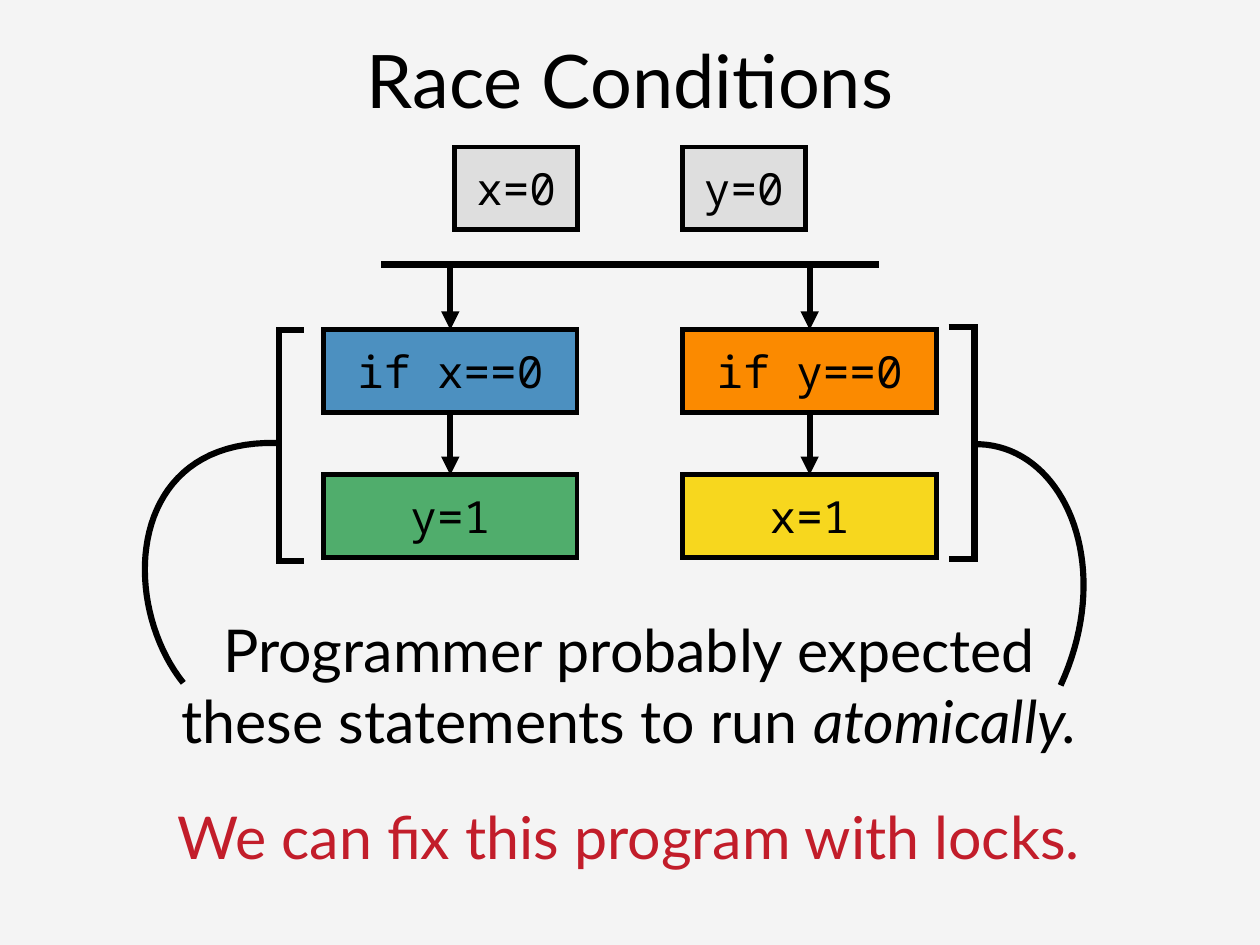
from dataclasses import dataclass
from typing import Any, Optional

from lxml.etree import SubElement
from pptx import Presentation
from pptx.dml.color import RGBColor
from pptx.enum.shapes import MSO_CONNECTOR, MSO_SHAPE
from pptx.enum.text import MSO_ANCHOR, PP_ALIGN
from pptx.oxml.ns import qn
from pptx.util import Inches, Pt

BLACK = RGBColor(0x00, 0x00, 0x00)
PAPER = RGBColor(0xF4, 0xF4, 0xF4)
GREY = RGBColor(0xDE, 0xDE, 0xDE)
BLUE = RGBColor(0x4C, 0x90, 0xC0)
ORANGE = RGBColor(0xFB, 0x8A, 0x00)
GREEN = RGBColor(0x50, 0xAD, 0x6C)
YELLOW = RGBColor(0xF7, 0xD7, 0x1E)
RED = RGBColor(0xC2, 0x1D, 0x2A)

WIDTH, HEIGHT = Inches(14.22), Inches(10.67)
COLUMNS, ROWS = 1024, 768
BOX_HEIGHT = 67
INITIAL_WIDTH, STATEMENT_WIDTH = 100, 206
INITIAL_ROW, RAIL_ROW, TEST_ROW, ASSIGN_ROW = 119.5, 215, 268, 386
THREAD_COLUMNS = (263, 555)
CURVE_STEPS = 40
TOP, BOTTOM = 0, 2

FRAME_FORMAT = {
    "vertical_anchor": MSO_ANCHOR.MIDDLE,
    "margin_left": Pt(4.5),
    "margin_right": Pt(4.5),
    "margin_top": Pt(4.5),
    "margin_bottom": Pt(4.5),
}

Point = tuple[float, float]


@dataclass(frozen=True)
class Statement:
    text: str
    column: float
    row: float
    width: float
    fill: RGBColor


@dataclass(frozen=True)
class Span:
    text: str
    italic: bool = False


@dataclass(frozen=True)
class Caption:
    lines: list[list[Span]]
    area: tuple[float, float, float, float]
    color: RGBColor


INITIAL_VALUES = [
    Statement("x=0", 369.5, INITIAL_ROW, INITIAL_WIDTH, GREY),
    Statement("y=0", 554.5, INITIAL_ROW, INITIAL_WIDTH, GREY),
]
THREADS = [
    [
        Statement(test, column, TEST_ROW, STATEMENT_WIDTH, test_fill),
        Statement(assign, column, ASSIGN_ROW, STATEMENT_WIDTH, assign_fill),
    ]
    for column, test, test_fill, assign, assign_fill in (
        (THREAD_COLUMNS[0], "if x==0", BLUE, "y=1", GREEN),
        (THREAD_COLUMNS[1], "if y==0", ORANGE, "x=1", YELLOW),
    )
]
BRACKETS = [
    [(247, 268), (227, 268), (227, 456), (247, 456)],
    [(771, 266), (792, 266), (792, 454), (771, 454)],
]
CURVES = [
    [(149, 555), (97, 490), (102, 357), (225, 360)],
    [(791, 361), (863, 359), (908, 457), (862, 557)],
]
CAPTIONS = [
    Caption(
        [
            [Span("Programmer probably expected")],
            [Span("these statements to run "), Span("atomically.", italic=True)],
        ],
        (143, 495, 737, 122),
        BLACK,
    ),
    Caption([[Span("We can fix this program with locks.")]], (132, 647, 758, 65), RED),
]


def across(columns: float) -> int:
    return round(WIDTH * columns / COLUMNS)


def down(rows: float) -> int:
    return round(HEIGHT * rows / ROWS)


def place(left: float, top: float, width: float, height: float) -> tuple[int, int, int, int]:
    return across(left), down(top), across(width), down(height)


def apply_format(target: Any, values: dict[str, Any]) -> None:
    for name, value in values.items():
        setattr(target, name, value)


def style_line(shape: Any, width: float, arrow: bool = False) -> None:
    shape.line.width = Pt(width)
    shape.line.color.rgb = BLACK
    line = shape.line._get_or_add_ln()
    SubElement(line, qn("a:miter"), lim="800000")
    if arrow:
        SubElement(line, qn("a:tailEnd"), type="triangle")


def write(frame: Any, lines: list[list[Span]], font: str, size: float, color: RGBColor) -> None:
    apply_format(frame, FRAME_FORMAT)
    para = frame.paragraphs[0]
    para.alignment = PP_ALIGN.CENTER
    for index, line in enumerate(lines):
        if index:
            para.add_line_break()
        for span in line:
            run = para.add_run()
            run.text = span.text
            apply_format(run.font, {"name": font, "size": Pt(size), "italic": span.italic})
            run.font.color.rgb = color


def draw_statement(page: Any, statement: Statement) -> Any:
    area = place(statement.column, statement.row, statement.width, BOX_HEIGHT)
    box = page.shapes.add_shape(MSO_SHAPE.RECTANGLE, *area)
    box.shadow.inherit = False
    box.fill.solid()
    box.fill.fore_color.rgb = statement.fill
    style_line(box, 4)
    write(box.text_frame, [[Span(statement.text)]], "Noto Sans Mono", 36, BLACK)
    return box


def draw_connector(page: Any, start: Point, end: Point, source: Optional[Any] = None,
                   target: Optional[Any] = None) -> None:
    connector = page.shapes.add_connector(
        MSO_CONNECTOR.STRAIGHT, across(start[0]), down(start[1]), across(end[0]), down(end[1])
    )
    if source is not None:
        connector.begin_connect(source, BOTTOM)
    if target is not None:
        connector.end_connect(target, TOP)
    style_line(connector, 5, arrow=target is not None)
    SubElement(connector._element.spPr, qn("a:effectLst"))


def draw_outline(page: Any, points: list[Point]) -> None:
    start, *rest = [(across(column), down(row)) for column, row in points]
    builder = page.shapes.build_freeform(*start)
    builder.add_line_segments(rest, close=False)
    outline = builder.convert_to_shape()
    outline.shadow.inherit = False
    outline.fill.background()
    style_line(outline, 5)


def bezier(controls: list[Point]) -> list[Point]:
    points = []
    for step in range(CURVE_STEPS + 1):
        t = step / CURVE_STEPS
        weights = ((1 - t) ** 3, 3 * t * (1 - t) ** 2, 3 * t**2 * (1 - t), t**3)
        column, row = (sum(w * c[axis] for w, c in zip(weights, controls)) for axis in (0, 1))
        points.append((column, row))
    return points


def draw_caption(page: Any, caption: Caption) -> None:
    box = page.shapes.add_textbox(*place(*caption.area))
    box.text_frame.word_wrap = False
    write(box.text_frame, caption.lines, "Lato", 48, caption.color)


def main() -> None:
    deck = Presentation()
    apply_format(deck, {"slide_width": WIDTH, "slide_height": HEIGHT})
    page = deck.slides.add_slide(deck.slide_layouts[5])
    page.background.fill.solid()
    page.background.fill.fore_color.rgb = PAPER

    title = page.shapes.title
    apply_format(title, dict(zip(("left", "top", "width", "height"), place(75, 6, 874, 117))))
    write(title.text_frame, [[Span("Race Conditions")]], "Lato", 60, BLACK)

    draw_connector(page, (310, RAIL_ROW), (714, RAIL_ROW))
    for statement in INITIAL_VALUES:
        draw_statement(page, statement)
    for thread in THREADS:
        test, assign = [draw_statement(page, statement) for statement in thread]
        middle = thread[0].column + STATEMENT_WIDTH / 2
        draw_connector(page, (middle, RAIL_ROW), (middle, TEST_ROW), target=test)
        draw_connector(page, (middle, TEST_ROW + BOX_HEIGHT), (middle, ASSIGN_ROW), test, assign)
    for points in BRACKETS + [bezier(controls) for controls in CURVES]:
        draw_outline(page, points)
    for caption in CAPTIONS:
        draw_caption(page, caption)
    deck.save("out.pptx")


if __name__ == "__main__":
    main()
